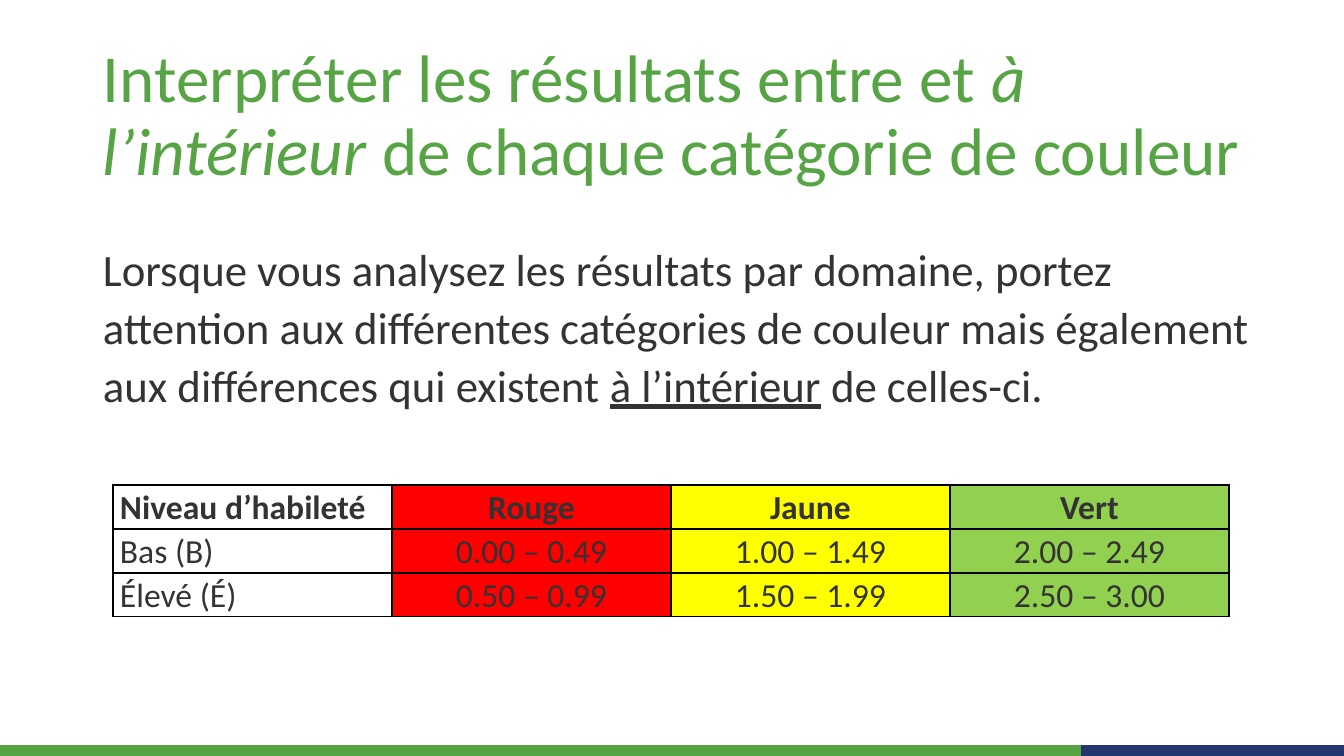
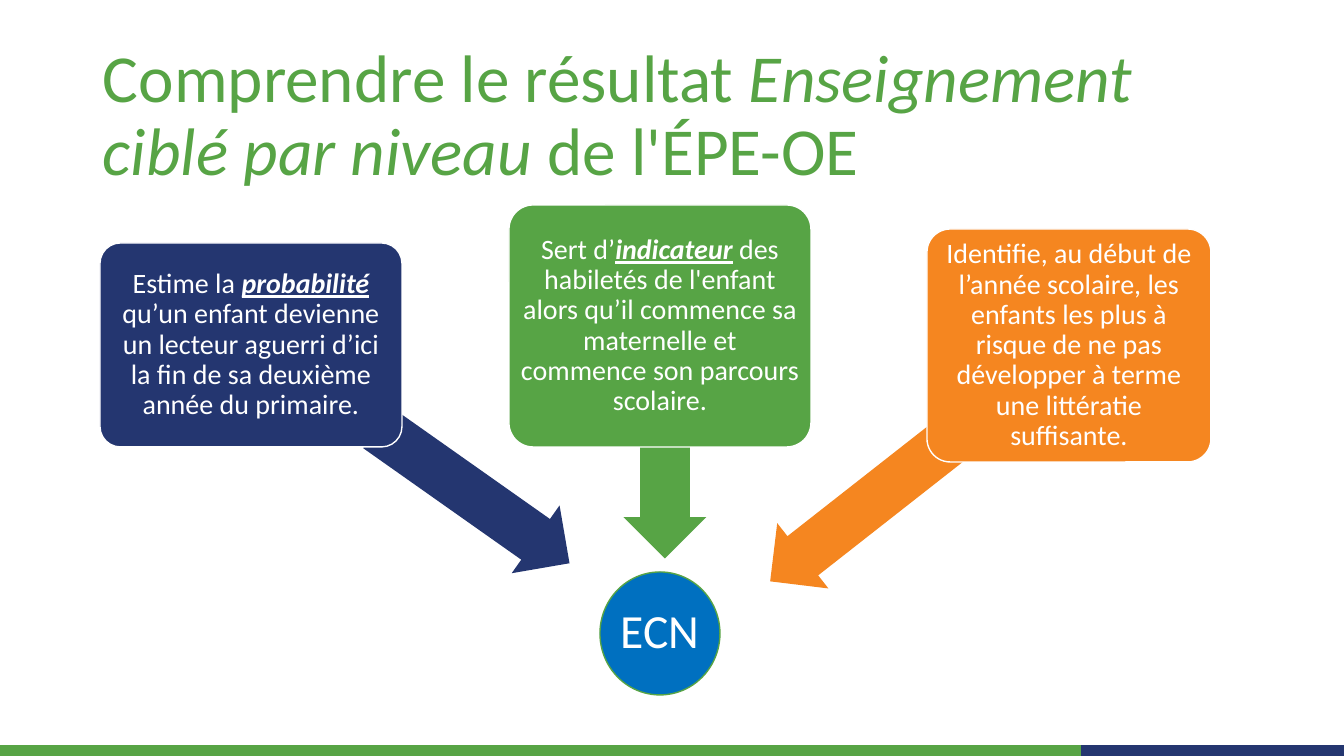
from lxml.etree import SubElement
from pptx import Presentation
from pptx.dml.color import RGBColor
from pptx.enum.shapes import MSO_SHAPE
from pptx.enum.text import MSO_ANCHOR, PP_ALIGN
from pptx.oxml.ns import qn
from pptx.util import Emu, Pt

FONT = "Calibri"
GREEN = "57A445"
NAVY = "243670"
ORANGE = "F58620"
BLUE = "0070C0"
WHITE = "FFFFFF"
BLACK = "000000"
DARK = "333333"
SLIDE_WIDTH, SLIDE_HEIGHT = 1344, 756


def px(length):
    return Emu(round(length * 914400 / 100.8))


def color(value):
    return RGBColor.from_string(value)


def write(frame, runs, size, text_color, align=PP_ALIGN.LEFT, spacing=0.9):
    paragraph = frame.paragraphs[0]
    paragraph.alignment = align
    paragraph.line_spacing = spacing
    for text, style in runs:
        run = paragraph.add_run()
        run.text = text
        run.font.name = FONT
        run.font.size = Pt(size)
        run.font.color.rgb = color(text_color)
        run.font.bold = "b" in style
        run.font.italic = "i" in style
        run.font.underline = "u" in style


def set_frame(frame, anchor, horizontal, vertical):
    frame.word_wrap = True
    frame.vertical_anchor = anchor
    frame.margin_left = frame.margin_right = px(horizontal)
    frame.margin_top = frame.margin_bottom = px(vertical)


def add_text(slide, place, runs, size, text_color, anchor, spacing):
    frame = slide.shapes.add_textbox(*map(px, place)).text_frame
    set_frame(frame, anchor, 10, 5)
    write(frame, runs, size, text_color, spacing=spacing)


def add_shape(slide, kind, place, fill, line=None):
    shape = slide.shapes.add_shape(kind, *map(px, place))
    shape.shadow.inherit = False
    shape.fill.solid()
    shape.fill.fore_color.rgb = color(fill)
    if line:
        shape.line.color.rgb = color(line)
        shape.line.width = Pt(1)
    else:
        shape.line.fill.background()
    return shape


def add_label(shape, runs, size, margin):
    set_frame(shape.text_frame, MSO_ANCHOR.MIDDLE, margin, margin)
    write(shape.text_frame, runs, size, WHITE, PP_ALIGN.CENTER)


def add_arrow(slide, place, rotation, fill):
    arrow = add_shape(slide, MSO_SHAPE.LEFT_ARROW, place, fill)
    arrow.adjustments[0] = 0.6
    arrow.adjustments[1] = 0.5
    arrow.rotation = rotation


def add_card(slide, place, fill, runs):
    card = add_shape(slide, MSO_SHAPE.ROUNDED_RECTANGLE, place, fill, WHITE)
    card.adjustments[0] = 0.1
    add_label(card, runs, 20, 4)


def add_borders(cell):
    properties = cell._tc.get_or_add_tcPr()
    for side in ("a:lnL", "a:lnR", "a:lnT", "a:lnB"):
        line = SubElement(properties, qn(side), w=str(Pt(1)))
        fill = SubElement(line, qn("a:solidFill"))
        SubElement(fill, qn("a:srgbClr"), val=BLACK)


def add_table(slide, left, top, column_width, row_height, rows, fills):
    width, height = column_width * len(fills), row_height * len(rows)
    frame = slide.shapes.add_table(
        len(rows), len(fills), *map(px, (left, top, width, height)))
    table = frame.table
    table.first_row = table.horz_banding = False
    for row_index, texts in enumerate(rows):
        table.rows[row_index].height = px(row_height)
        for column_index, (text, fill) in enumerate(zip(texts, fills)):
            cell = table.cell(row_index, column_index)
            cell.margin_left = cell.margin_right = px(7)
            cell.margin_top = cell.margin_bottom = 0
            add_borders(cell)
            if fill:
                cell.fill.solid()
                cell.fill.fore_color.rgb = color(fill)
                cell.vertical_anchor = MSO_ANCHOR.MIDDLE
            else:
                cell.fill.background()
            align = PP_ALIGN.CENTER if fill else PP_ALIGN.LEFT
            style = "b" if row_index == 0 else ""
            write(cell.text_frame, [(text, style)], 24, DARK, align, 1.07)
    for column in table.columns:
        column.width = px(column_width)


def add_slide(presentation, title, title_width):
    slide = presentation.slides.add_slide(presentation.slide_layouts[6])
    for left, right, fill in ((1081, 1212, NAVY), (1212, SLIDE_WIDTH, NAVY),
                              (0, 1081, GREEN)):
        place = (left, 745, right - left, SLIDE_HEIGHT - 745)
        add_shape(slide, MSO_SHAPE.RECTANGLE, place, fill)
    add_text(slide, (93, 44, title_width, 146), title, 48, GREEN,
             MSO_ANCHOR.MIDDLE, 0.9)
    return slide


def build_results_slide(presentation):
    slide = add_slide(presentation, [
        ("Interpréter les résultats entre et ", ""),
        ("à l’intérieur", "i"),
        (" de chaque catégorie de couleur", ""),
    ], 1209)
    add_text(slide, (93, 232, 1184, 424), [
        ("Lorsque vous analysez les résultats par domaine, portez attention "
         "aux différentes catégories de couleur mais également aux "
         "différences qui existent ", ""),
        ("à l’intérieur", "u"),
        (" de celles-ci.", ""),
    ], 32, DARK, MSO_ANCHOR.TOP, 1.08)
    rows = [
        ("Niveau d’habileté", "Rouge", "Jaune", "Vert"),
        ("Bas (B)", "0.00 – 0.49", "1.00 – 1.49", "2.00 – 2.49"),
        ("Élevé (É)", "0.50 – 0.99", "1.50 – 1.99", "2.50 – 3.00"),
    ]
    add_table(slide, 113, 485, 279, 44, rows,
              (None, "FF0000", "FFFF00", "92D050"))


def build_indicator_slide(presentation):
    slide = add_slide(presentation, [
        ("Comprendre le résultat ", ""),
        ("Enseignement ciblé par niveau", "i"),
        (" de l'ÉPE-OE", ""),
    ], 1159)
    circle = add_shape(slide, MSO_SHAPE.OVAL, (600, 572, 120, 123), BLUE, GREEN)
    add_label(circle, [("ECN", "")], 34, 2)
    branches = [
        (NAVY, (356, 454, 235, 83), 215.2, (100, 243, 302, 204), [
            ("Estime la ", ""),
            ("probabilité", "biu"),
            (" qu’un enfant devienne un lecteur aguerri d’ici la fin de sa "
             "deuxième année du primaire.", ""),
        ]),
        (GREEN, (535, 387, 260, 83), 270, (509, 205, 302, 242), [
            ("Sert d’", ""),
            ("indicateur", "biu"),
            (" des habiletés de l'enfant alors qu’il commence sa maternelle "
             "et commence son parcours scolaire.", ""),
        ]),
        (ORANGE, (744, 464, 246, 83), 321.9, (927, 229, 284, 233), [
            ("Identifie, au début de l’année scolaire, les enfants les plus "
             "à risque de ne pas développer à terme une littératie "
             "suffisante.", ""),
        ]),
    ]
    for fill, arrow_place, rotation, card_place, runs in branches:
        add_arrow(slide, arrow_place, rotation, fill)
        add_card(slide, card_place, fill, runs)


def main():
    presentation = Presentation()
    presentation.slide_width = px(SLIDE_WIDTH)
    presentation.slide_height = px(SLIDE_HEIGHT)
    build_results_slide(presentation)
    build_indicator_slide(presentation)
    presentation.save("out.pptx")


if __name__ == "__main__":
    main()
